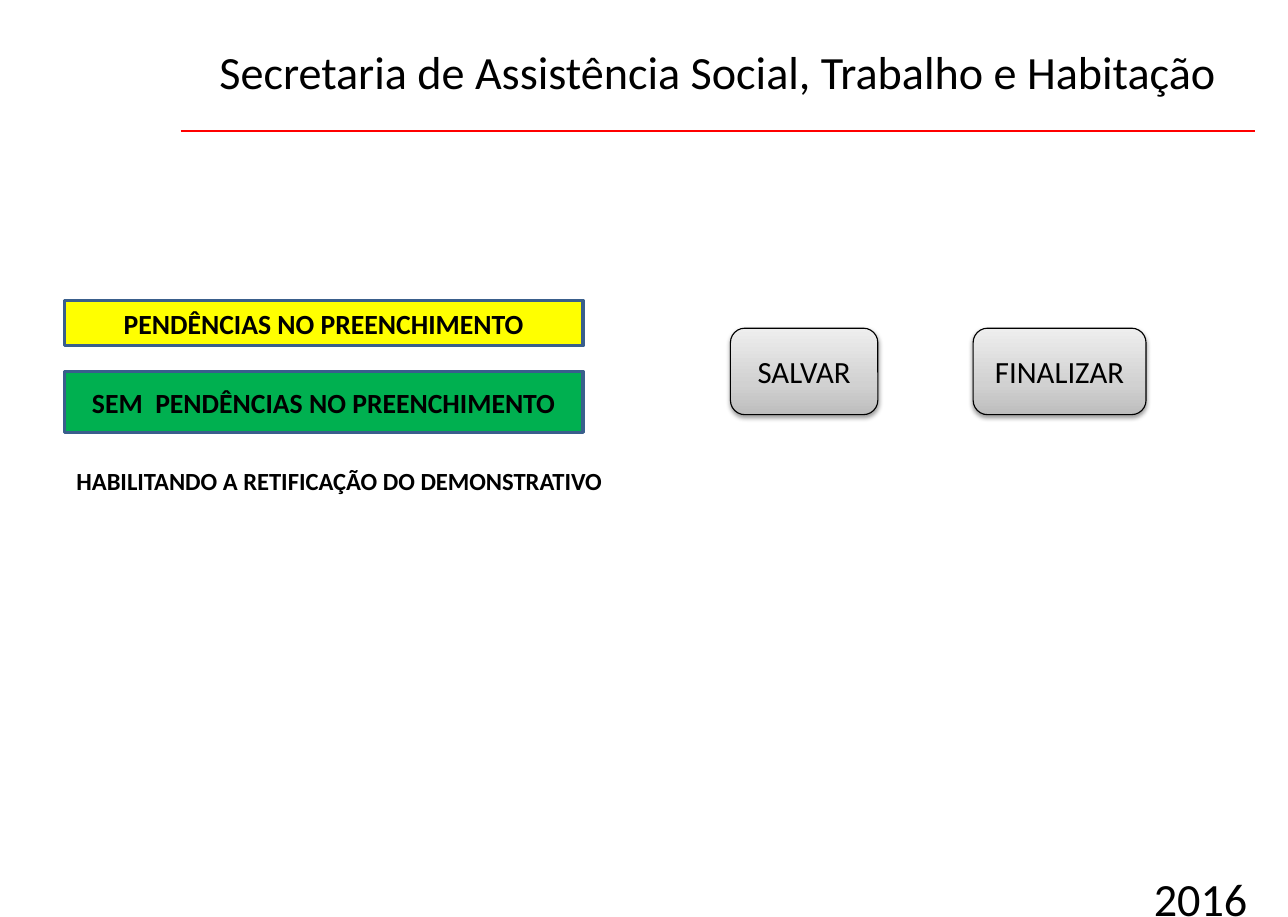
from lxml import etree
from pptx import Presentation
from pptx.dml.color import RGBColor
from pptx.enum.shapes import MSO_CONNECTOR, MSO_SHAPE
from pptx.enum.text import MSO_ANCHOR, PP_ALIGN
from pptx.oxml.ns import qn
from pptx.util import Pt

RECT, ROUNDED = MSO_SHAPE.RECTANGLE, MSO_SHAPE.ROUNDED_RECTANGLE
STRAIGHT = MSO_CONNECTOR.STRAIGHT
TOP, MIDDLE = MSO_ANCHOR.TOP, MSO_ANCHOR.MIDDLE
LEFT, CENTER = PP_ALIGN.LEFT, PP_ALIGN.CENTER

PX = 9144  # 100 px to the inch
FONT = "Calibri"
COLORS = {
    "text": "000000", "rule": "FF0000", "pending": "FFFF00",
    "complete": "00B050", "status_line": "3A5F8C", "button_line": "000000",
    "shadow": "000000",
}
BUTTON_STOPS = [(0, "BDBDBD"), (35, "D1D1D1"), (100, "EEEEEE")]


def emu(*lengths):
    return [n * PX for n in lengths]


def rgb(name):
    return RGBColor.from_string(COLORS[name])


def write(sp, text, size, bold=False, align=LEFT, anchor=TOP, wrap=True):
    tf = sp.text_frame
    frame = {"word_wrap": wrap, "vertical_anchor": anchor,
             "margin_left": 11 * PX, "margin_right": 11 * PX,
             "margin_top": 6 * PX, "margin_bottom": 6 * PX}
    for name, value in frame.items():
        setattr(tf, name, value)
    p = tf.paragraphs[0]
    p.alignment = align
    r = p.add_run()
    r.text = text
    for name, value in {"name": FONT, "size": Pt(size), "bold": bold}.items():
        setattr(r.font, name, value)
    r.font.color.rgb = rgb("text")


def add_text(slide, box, text, size, **style):
    write(slide.shapes.add_textbox(*emu(*box)), text, size, **style)


def add_box(slide, kind, box, line, width):
    sp = slide.shapes.add_shape(kind, *emu(*box))
    sp.shadow.inherit = False
    sp.line.color.rgb = rgb(line)
    sp.line.width = Pt(width)
    return sp


def add_header(slide, x, y, w, h):
    add_text(slide, (x + 24, y, w - 27, 62),
             "Secretaria de Assistência Social, Trabalho e Habitação", 30)
    rule = slide.shapes.add_connector(STRAIGHT, *emu(x, y + h, x + w, y + h))
    rule.line.color.rgb = rgb("rule")
    rule.line.width = Pt(1.5)
    etree.SubElement(rule._element.spPr, qn("a:effectLst"))


def add_status(slide, x, y, w):
    bars = [(0, 41, "pending", "PENDÊNCIAS NO PREENCHIMENTO"),
            (64, 55, "complete", "SEM  PENDÊNCIAS NO PREENCHIMENTO")]
    for top, h, fill, text in bars:
        sp = add_box(slide, RECT, (x, y + top, w, h), "status_line", 2)
        sp.fill.solid()
        sp.fill.fore_color.rgb = rgb(fill)
        write(sp, text, 18, bold=True, align=CENTER, anchor=MIDDLE)
    add_text(slide, (x, y + 143, 520, 39),
             "HABILITANDO A RETIFICAÇÃO DO DEMONSTRATIVO", 16, bold=True)


def add_button(slide, x, y, w, h, text):
    sp = add_box(slide, ROUNDED, (x, y, w, h), "button_line", 0.75)
    # Gradient running upwards
    sp.fill.gradient()
    sp.fill.gradient_angle = 90
    spPr = sp._element.spPr
    stops = spPr.find(".//" + qn("a:gsLst"))
    for gs in list(stops):
        stops.remove(gs)
    for pos, color in BUTTON_STOPS:
        gs = etree.SubElement(stops, qn("a:gs"), pos=str(pos * 1000))
        etree.SubElement(gs, qn("a:srgbClr"), val=color)
    # Soft shadow below
    shadow = etree.SubElement(spPr.find(qn("a:effectLst")), qn("a:outerShdw"),
                              blurRad=str(Pt(3.1)), dist=str(Pt(1.6)),
                              dir="5400000", rotWithShape="0")
    clr = etree.SubElement(shadow, qn("a:srgbClr"), val=COLORS["shadow"])
    etree.SubElement(clr, qn("a:alpha"), val="38000")
    write(sp, text, 20, align=CENTER, anchor=MIDDLE, wrap=False)


def add_buttons(slide, x, y, h):
    for left, w, text in [(0, 133, "SALVAR"), (219, 156, "FINALIZAR")]:
        add_button(slide, x + left, y, w, h, text)


def main():
    prs = Presentation()
    prs.slide_width, prs.slide_height = emu(1162, 827)
    slide = prs.slides.add_slide(prs.slide_layouts[6])
    add_header(slide, 163, 33, 969, 85)
    add_status(slide, 58, 271, 468)
    add_buttons(slide, 659, 296, 78)
    # Year in the corner
    add_text(slide, (1030, 779, 132, 48), "2016", 30, wrap=True)
    prs.save("out.pptx")


if __name__ == "__main__":
    main()
